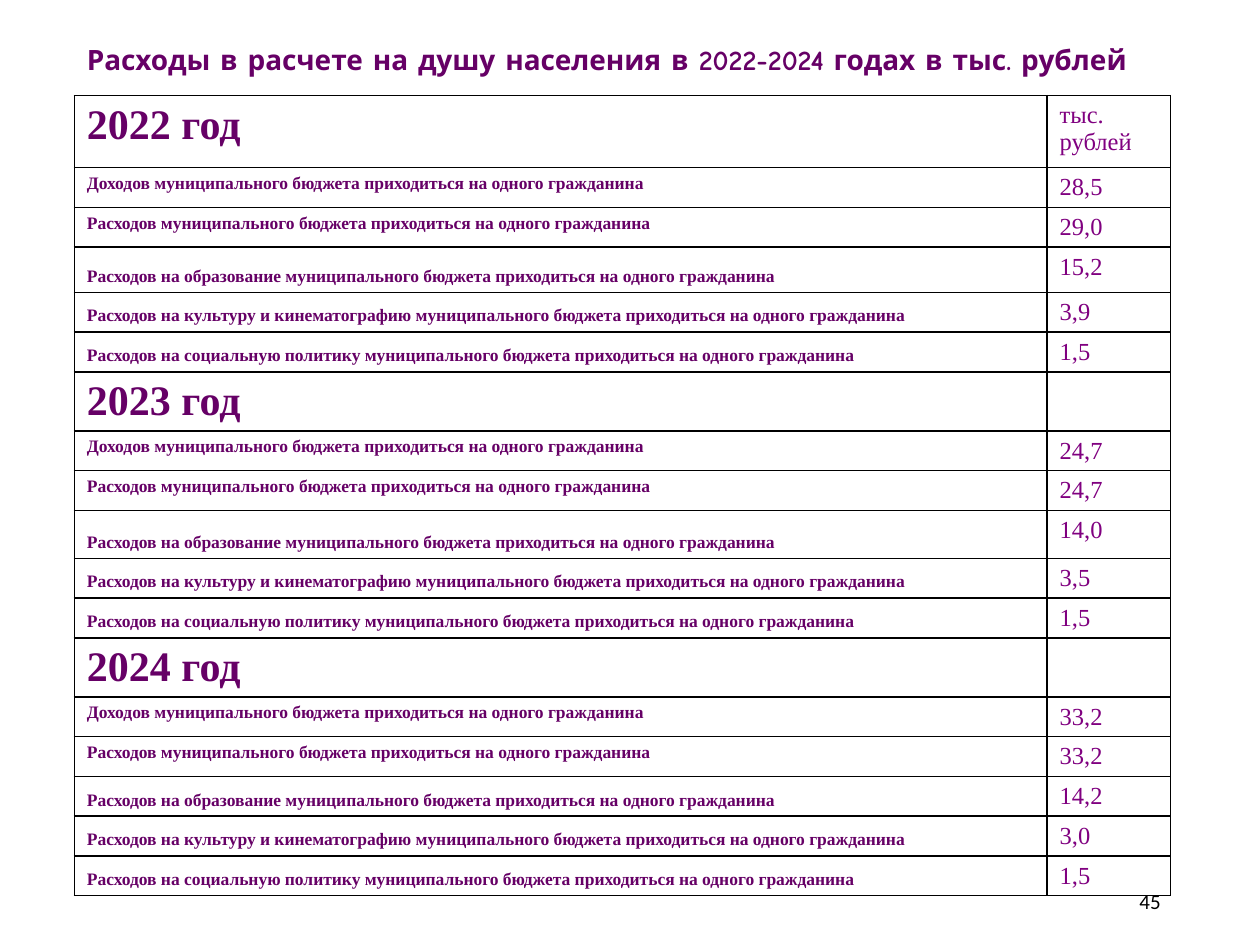
from dataclasses import dataclass
from lxml.etree import SubElement
from pptx import Presentation
from pptx.dml.color import RGBColor
from pptx.enum.text import MSO_ANCHOR as Anchor, PP_ALIGN as Align
from pptx.oxml import parse_xml
from pptx.oxml.ns import nsdecls, qn
from pptx.util import Inches, Pt

PLUM, PURPLE, BLACK = "660066", "800080", "000000"
SERIF = "Times New Roman"
HEADING = {"name": SERIF, "size": 24, "bold": True, "color": PLUM}
LABEL = {"name": SERIF, "size": 10, "bold": True, "color": PLUM}
VALUE = {"name": SERIF, "size": 14, "bold": False, "color": PURPLE}
TITLE = {"name": "Comic Neue", "size": 16, "bold": True, "color": PLUM}
NUMBER = {"name": "Calibri", "size": 12, "bold": False, "color": BLACK}

ITEMS = [
    ("Доходов", Anchor.TOP),
    ("Расходов", Anchor.TOP),
    ("Расходов на образование", Anchor.BOTTOM),
    ("Расходов на культуру и кинематографию", Anchor.BOTTOM),
    ("Расходов на социальную политику", Anchor.BOTTOM),
]
YEARS = [
    ("2022 год", "тыс. рублей", 0.57, 0.36, ["28,5", "29,0", "15,2", "3,9", "1,5"]),
    ("2023 год", "", 0.47, 0.38, ["24,7", "24,7", "14,0", "3,5", "1,5"]),
    ("2024 год", "", 0.47, 0.31, ["33,2", "33,2", "14,2", "3,0", "1,5"]),
]
ROW, EDUCATION = 0.31, 2


def rgb(color):
    return RGBColor.from_string(color)


@dataclass
class Page:
    deck: object
    slide: object
    border: str = BLACK
    border_width: float = 1

    def area(self, left, top, width, height):
        wide, high = self.deck.slide_width, self.deck.slide_height
        return [int(n) for n in (left * wide, top * high, width * wide, height * high)]

    def add_span(self, frame, text, style, align=Align.LEFT):
        para = frame.paragraphs[0]
        para.alignment = align
        span = para.add_run()
        span.text = text
        values = {**style, "size": Pt(style["size"])}
        span.font.color.rgb = rgb(values.pop("color"))
        for key, value in values.items():
            setattr(span.font, key, value)

    def text(self, area, text, style, align=Align.LEFT, **frame_format):
        box = self.slide.shapes.add_textbox(*self.area(*area))
        frame = box.text_frame
        for key, value in {"word_wrap": True, **frame_format}.items():
            setattr(frame, key, value)
        self.add_span(frame, text, style, align)

    def outline(self, cell):
        cell.fill.background()
        props = cell._tc.get_or_add_tcPr()
        for index, side in enumerate(("lnL", "lnR", "lnT", "lnB")):
            line = parse_xml(f'<a:{side} {nsdecls("a")} w="{Pt(self.border_width)}"/>')
            fill = SubElement(line, qn("a:solidFill"))
            SubElement(fill, qn("a:srgbClr"), val=self.border)
            props.insert(index, line)

    def table(self, area, widths, rows):
        frame = self.slide.shapes.add_table(len(rows), len(widths), *self.area(*area))
        table = frame.table
        table.first_row = table.horz_banding = False
        for column, width in zip(table.columns, widths):
            column.width = Inches(width)
        for row, (height, cells) in zip(table.rows, rows):
            row.height = Inches(height)
            for cell, (text, style, anchor) in zip(row.cells, cells):
                self.outline(cell)
                cell.vertical_anchor = anchor
                if text:
                    self.add_span(cell.text_frame, text, style)


def expense_rows():
    rows = []
    for year, unit, heading_height, education_height, values in YEARS:
        rows.append((heading_height, [(year, HEADING, Anchor.TOP), (unit, VALUE, Anchor.TOP)]))
        for index, ((item, anchor), value) in enumerate(zip(ITEMS, values)):
            label = f"{item} муниципального бюджета приходиться на одного гражданина"
            height = education_height if index == EDUCATION else ROW
            rows.append((height, [(label, LABEL, anchor), (value, VALUE, Anchor.TOP)]))
    return rows


def main():
    deck = Presentation()
    deck.slide_width, deck.slide_height = Inches(10), Inches(7.5)
    page = Page(deck, deck.slides.add_slide(deck.slide_layouts[6]))
    rows = expense_rows()
    table_height = sum(height for height, _ in rows) / 7.5
    page.table((0.059, 0.76 / 7.5, 0.87, table_height), (7.72, 0.98), rows)
    page.text((0.059, 0, 0.851, 0.13),
              "Расходы в расчете на душу населения в 2022-2024 годах в тыс. рублей",
              TITLE, margin_top=Inches(0.34))
    page.text((0.706, 6.95 / 7.5, 0.225, 0.4 / 7.5), "45", NUMBER, Align.RIGHT,
              vertical_anchor=Anchor.MIDDLE)
    deck.save("out.pptx")


if __name__ == "__main__":
    main()
